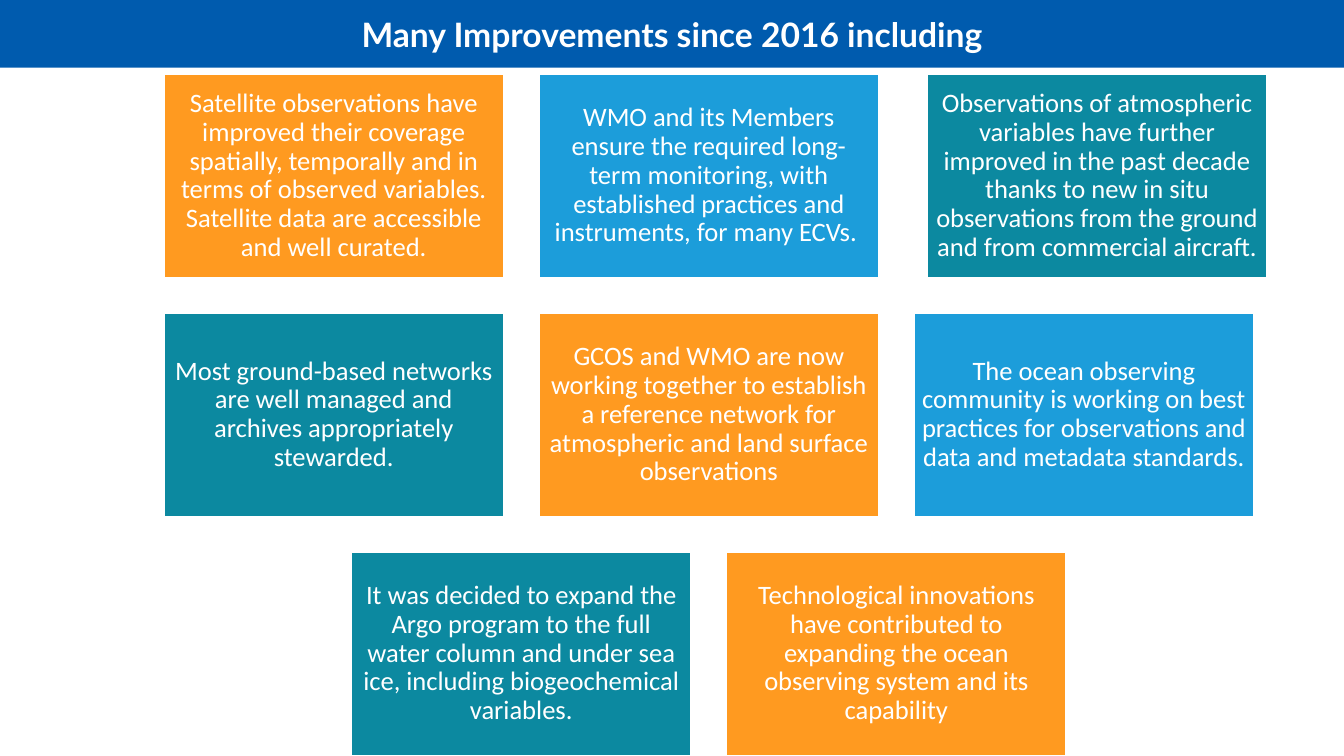
import pptx
import pptx.util
import pptx.dml.color
import pptx.enum.shapes
import pptx.enum.text

Inches, Pt = pptx.util.Inches, pptx.util.Pt
RGBColor = pptx.dml.color.RGBColor
CENTER = pptx.enum.text.PP_ALIGN.CENTER
MIDDLE = pptx.enum.text.MSO_ANCHOR.MIDDLE

WHITE = RGBColor(0xFF, 0xFF, 0xFF)
NAVY = RGBColor(0x00, 0x5B, 0xAE)
ORANGE = RGBColor(0xFF, 0x9A, 0x20)
BLUE = RGBColor(0x1C, 0x9D, 0xDA)
TEAL = RGBColor(0x0C, 0x89, 0xA0)

TITLE = "Many Improvements since 2016 including"
# Each row: left edge of its first card, then (text, fill, extra shift to the right)
ROWS = [
    (1.62, [
        ("Satellite observations have improved their coverage spatially, temporally and in "
         "terms of observed variables. Satellite data are accessible and well curated.", ORANGE, 0),
        ("WMO and its Members ensure the required long-term monitoring, with established "
         "practices and instruments, for many ECVs. ", BLUE, 0),
        ("Observations of atmospheric variables have further improved in the past decade thanks "
         "to new in situ observations from the ground and from commercial aircraft.", TEAL, 0.13),
    ]),
    (1.62, [
        ("Most ground-based networks are well managed and archives appropriately stewarded.",
         TEAL, 0),
        ("GCOS and WMO are now working together to establish a reference network for "
         "atmospheric and land surface observations", ORANGE, 0),
        ("The ocean observing community is working on best practices for observations and data "
         "and metadata standards.", BLUE, 0),
    ]),
    (3.48, [
        ("It was decided to expand the Argo program to the full water column and under sea ice, "
         "including biogeochemical variables.", TEAL, 0),
        ("Technological innovations have contributed to expanding the ocean observing system "
         "and its capability", ORANGE, 0),
    ]),
]
TOP = 0.73
CARD_WIDTH, CARD_HEIGHT = 3.38, 2.03
GAP = 0.34


def write_text(shape, text, font_name, size, bold=False):
    frame = shape.text_frame
    frame.word_wrap = True
    frame.auto_size = pptx.enum.text.MSO_AUTO_SIZE.NONE
    frame.vertical_anchor = MIDDLE
    paragraph = frame.paragraphs[0]
    paragraph.text = text
    paragraph.alignment = CENTER
    font = paragraph.font
    font.name, font.size, font.bold = font_name, Pt(size), bold
    font.color.rgb = WHITE
    return frame


def add_card(slide, text, fill, left, top):
    card = slide.shapes.add_shape(
        pptx.enum.shapes.MSO_SHAPE.RECTANGLE,
        Inches(left), Inches(top), Inches(CARD_WIDTH), Inches(CARD_HEIGHT))
    card.shadow.inherit = False
    card.fill.solid()
    card.fill.fore_color.rgb = fill
    card.line.color.rgb = WHITE
    card.line.width = Pt(2)
    frame = write_text(card, text, "Calibri", 19)
    frame.margin_left = frame.margin_right = Inches(0.08)
    frame.margin_top = frame.margin_bottom = Inches(0.08)
    frame.paragraphs[0].line_spacing = 0.9


def main():
    presentation = pptx.Presentation()
    presentation.slide_width = Inches(13.33)
    presentation.slide_height = Inches(7.5)
    slide = presentation.slides.add_slide(presentation.slide_layouts[5])

    title = slide.shapes.title
    title.left, title.top = 0, 0
    title.width, title.height = presentation.slide_width, Inches(0.67)
    title.fill.solid()
    title.fill.fore_color.rgb = NAVY
    write_text(title, TITLE, "Lato", 24, bold=True)

    for row, (first_left, cards) in enumerate(ROWS):
        for column, (text, fill, shift) in enumerate(cards):
            left = first_left + column * (CARD_WIDTH + GAP) + shift
            add_card(slide, text, fill, left, TOP + row * (CARD_HEIGHT + GAP))

    presentation.save("out.pptx")


if __name__ == "__main__":
    main()
